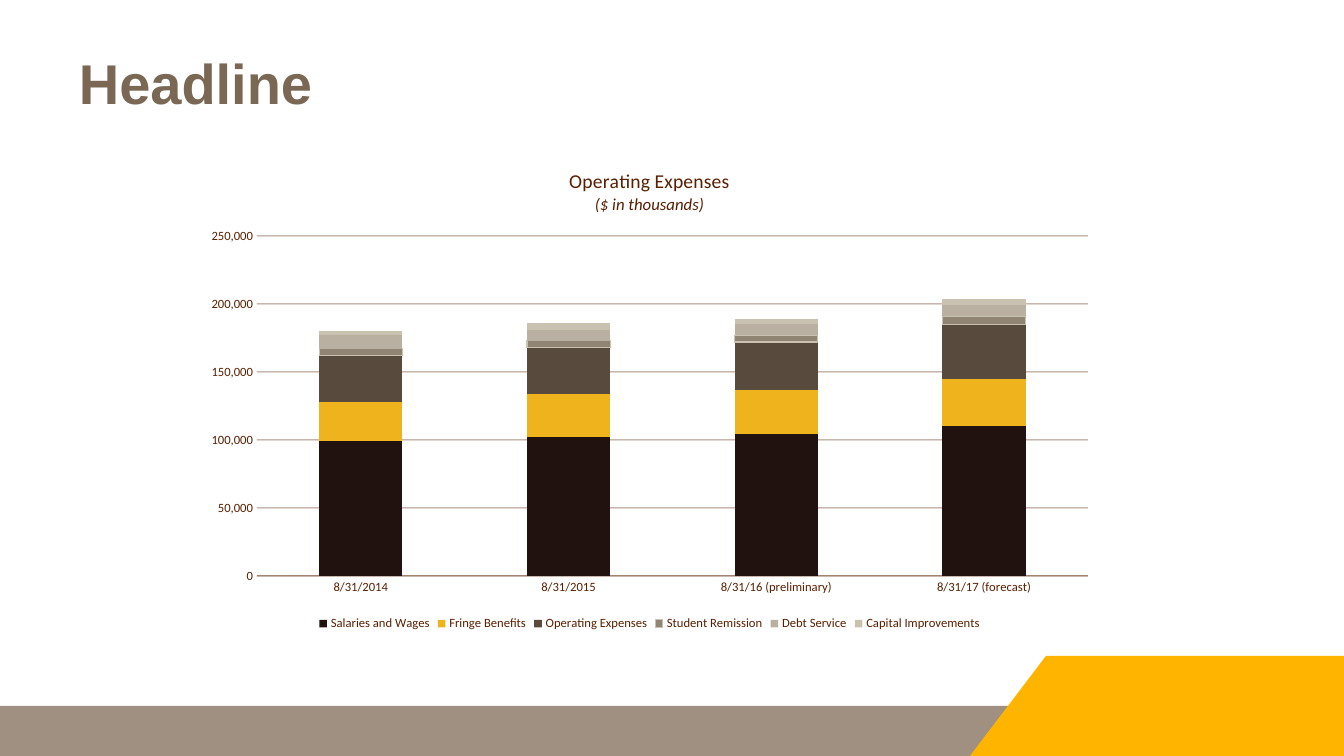
from lxml.etree import SubElement
from pptx import Presentation
from pptx.chart.data import CategoryChartData
from pptx.dml.color import RGBColor
from pptx.enum.chart import XL_CHART_TYPE as ChartType, XL_LEGEND_POSITION as LegendPosition
from pptx.enum.chart import XL_TICK_MARK as TickMark
from pptx.enum.shapes import MSO_SHAPE as Preset
from pptx.enum.text import MSO_ANCHOR as Anchor
from pptx.oxml import parse_xml
from pptx.oxml.ns import nsdecls, qn
from pptx.util import Emu, Pt

SCALE = 914400 / 100.8
BROWN = "591F00"
PERIODS = ["8/31/2014", "8/31/2015", "8/31/16 (preliminary)", "8/31/17 (forecast)"]
EXPENSES = [
    ("Salaries and Wages", "21120F", (99000, 102000, 104000, 110000)),
    ("Fringe Benefits", "EFB31D", (29000, 32000, 33000, 35000)),
    ("Operating Expenses", "584B3D", (34000, 34000, 35000, 40000)),
    ("Student Remission", "908472", (5000, 5000, 5000, 6000)),
    ("Debt Service", "B9B0A1", (10000, 8000, 8000, 8000)),
    ("Capital Improvements", "CAC2B0", (3000, 5000, 4000, 5000)),
]


def px(*lengths):
    """Turn pixel lengths into EMU."""
    return [Emu(round(length * SCALE)) for length in lengths]


def color(value):
    """Turn a hex string into a colour."""
    return RGBColor.from_string(value)


def style_font(font, size, value, name="Calibri", bold=False, italic=False):
    """Set the face, size and colour of a font."""
    font.name, font.size, font.bold, font.italic = name, Pt(size), bold, italic
    font.color.rgb = color(value)


def paint(shape, value):
    """Give a shape a plain fill without outline or shadow."""
    shape.shadow.inherit = False
    shape.fill.solid()
    shape.fill.fore_color.rgb = color(value)
    shape.line.fill.background()


def style_line(line, value, opacity=100):
    """Draw a thin line with the given opacity in percent."""
    line.width = Pt(0.75)
    line.color.rgb = color(value)
    if opacity < 100:
        tint = line.fill._xPr.find(".//" + qn("a:srgbClr"))
        SubElement(tint, qn("a:alpha"), val=str(opacity * 1000))


def add_footer(slide):
    """Add the grey band and the slanted gold corner."""
    band = slide.shapes.add_shape(Preset.RECTANGLE, *px(0, 706, 1075, 50))
    paint(band, "9F9081")
    outline = slide.shapes.build_freeform(1046, 656, scale=SCALE)
    outline.add_line_segments([(1344, 656), (1344, 756), (970, 756)], close=True)
    paint(outline.convert_to_shape(), "FFB500")


def add_headline(slide, text):
    """Add the slide headline."""
    frame = slide.shapes.add_textbox(*px(69, 54, 907, 66)).text_frame
    frame.word_wrap = True
    frame.vertical_anchor = Anchor.BOTTOM
    frame.text = text
    paragraph = frame.paragraphs[0]
    paragraph.line_spacing = 0.8
    style_font(paragraph.runs[0].font, 40, "7A6855", "Arial", bold=True)


def place_plot(chart, frame, plot):
    """Fix the inner plot area inside the chart frame."""
    left, top, width, height = frame
    shares = {
        "x": (plot[0] - left) / width,
        "y": (plot[1] - top) / height,
        "w": plot[2] / width,
        "h": plot[3] / height,
    }
    modes = "".join(f'<c:{axis}Mode val="edge"/>' for axis in "xy")
    sizes = "".join(f'<c:{key} val="{share:.4f}"/>' for key, share in shares.items())
    area = chart._chartSpace.chart.plotArea
    for automatic in area.findall(qn("c:layout")):
        area.remove(automatic)
    area.insert(0, parse_xml(
        f'<c:layout {nsdecls("c")}><c:manualLayout><c:layoutTarget val="inner"/>'
        f"{modes}{sizes}</c:manualLayout></c:layout>"
    ))


def style_title(chart, heading, unit):
    """Write the two-line chart title."""
    frame = chart.chart_title.text_frame
    frame.text = heading
    frame.add_paragraph().text = unit
    for paragraph, size, italic in zip(frame.paragraphs, (14, 12), (False, True)):
        style_font(paragraph.runs[0].font, size, BROWN, italic=italic)
    chart.chart_title.include_in_layout = False


def style_axes(chart):
    """Format both axes and the gridlines."""
    periods, amounts = chart.category_axis, chart.value_axis
    for axis in (periods, amounts):
        axis.major_tick_mark = axis.minor_tick_mark = TickMark.NONE
        style_font(axis.tick_labels.font, 9, BROWN)
    style_line(periods.format.line, BROWN, 50)
    amounts.format.line.fill.background()
    amounts.minimum_scale, amounts.maximum_scale, amounts.major_unit = 0, 250000, 50000
    amounts.tick_labels.number_format = "#,##0"
    amounts.tick_labels.number_format_is_linked = False
    style_line(amounts.major_gridlines.format.line, BROWN, 50)


def add_expense_chart(slide):
    """Add the stacked columns of operating expenses."""
    data = CategoryChartData(number_format="#,##0")
    data.categories = PERIODS
    for name, _, amounts in EXPENSES:
        data.add_series(name, amounts)
    frame = (193, 150, 913, 485)
    chart = slide.shapes.add_chart(ChartType.COLUMN_STACKED, *px(*frame), data).chart
    style_font(chart.font, 10, "000000")
    style_title(chart, "Operating Expenses", "($ in thousands)")
    style_axes(chart)
    place_plot(chart, frame, (257, 236, 831, 340))
    chart.has_legend = True
    chart.legend.position = LegendPosition.BOTTOM
    chart.legend.include_in_layout = False
    style_font(chart.legend.font, 9, BROWN)
    columns = chart.plots[0]
    columns.gap_width, columns.overlap, columns.vary_by_categories = 150, 100, False
    for series, (name, value, _) in zip(columns.series, EXPENSES):
        series.format.fill.solid()
        series.format.fill.fore_color.rgb = color(value)
        if name == "Student Remission":
            style_line(series.format.line, "CAC2B0")


def main():
    """Build and save the slide."""
    deck = Presentation()
    deck.slide_width, deck.slide_height = px(1344, 756)
    slide = deck.slides.add_slide(deck.slide_layouts[6])
    add_footer(slide)
    add_expense_chart(slide)
    add_headline(slide, "Headline")
    deck.save("out.pptx")


if __name__ == "__main__":
    main()
